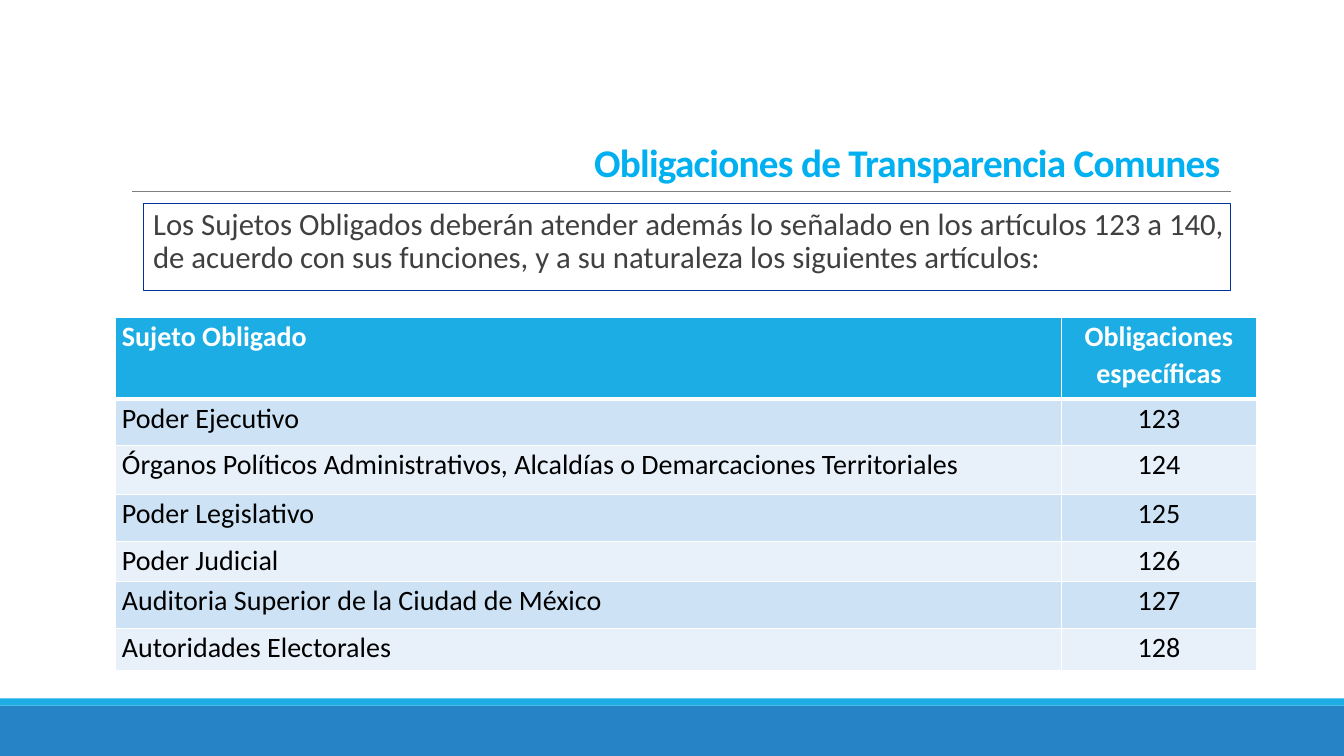
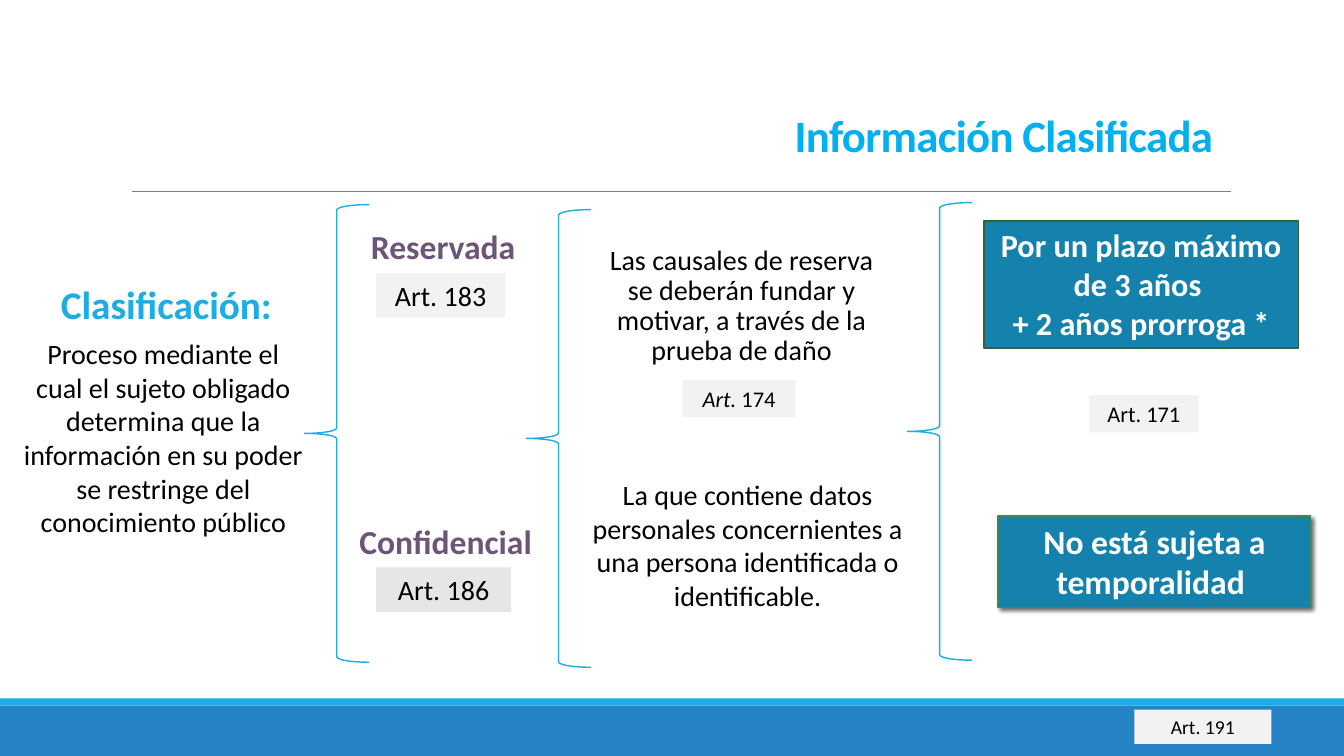
"""Build two slides on transparency duties and classified information."""
from lxml.etree import SubElement
from pptx import Presentation
from pptx.dml.color import RGBColor
from pptx.enum.shapes import MSO_CONNECTOR as Connector, MSO_SHAPE as Shape
from pptx.enum.text import MSO_ANCHOR as Anchor, PP_ALIGN as Align
from pptx.oxml.ns import qn
from pptx.util import Inches, Pt

WIDTH, HEIGHT = 13.33, 7.5
FONT = "Calibri"
CYAN, BLUE, TEAL, PURPLE = "1CADE4", "2683C6", "1482AC", "6C5578"
TITLE_COLOR, RULE_COLOR = "00B0F0", "808080"
WHITE, BLACK, DARK, PALE, GRAY = "FFFFFF", "000000", "404040", "F2F2F2", "E6E6E6"
ROW_FILLS = ("CDE3F5", "E8F1FA")
INSETS = (0.1, 0.05, 0.1, 0.05)

DUTIES_TITLE = "Obligaciones de Transparencia Comunes"
DUTIES_INTRO = (
    "Los Sujetos Obligados deberán atender además lo señalado en los artículos "
    "123 a 140, de acuerdo con sus funciones, y a su naturaleza los siguientes artículos:"
)
DUTIES = [
    ("Sujeto Obligado", "Obligaciones específicas"),
    ("Poder Ejecutivo", "123"),
    ("Órganos Políticos Administrativos, Alcaldías o Demarcaciones Territoriales", "124"),
    ("Poder Legislativo", "125"),
    ("Poder Judicial", "126"),
    ("Auditoria Superior de la Ciudad de México", "127"),
    ("Autoridades Electorales", "128"),
]
COLUMN_WIDTHS = (9.39, 1.93)
ROW_HEIGHTS = (0.81, 0.46, 0.49, 0.46, 0.4, 0.47, 0.41)

CLASSIFIED_TITLE = "Información Clasificada"
HEADINGS = [
    ("Clasificación:", (0.48, 2.73, 2.34, 0.57), 28, CYAN),
    ("Reservada", (3.45, 2.19, 1.89, 0.5), 24, PURPLE),
    ("Confidencial", (3.46, 5.12, 1.92, 0.5), 24, PURPLE),
]
EXPLANATIONS = [
    ("Proceso mediante el cual el sujeto obligado determina que la información "
     "en su poder se restringe del conocimiento público", (0.13, 3.29, 2.98, 2.12), 1),
    ("Las causales de reserva se deberán fundar y motivar, a través de la prueba de daño",
     (5.83, 2.39, 3.05, 1.31), 0.9),
    ("La que contiene datos personales concernientes a una persona identificada "
     "o identificable.", (5.71, 4.69, 3.41, 1.45), 1),
]
ARTICLES = [
    ("183", (3.73, 2.71, 1.28, 0.44), 20, PALE, False),
    ("186", (3.73, 5.63, 1.34, 0.44), 20, GRAY, False),
    ("174", (6.77, 3.77, 1.12, 0.37), 16, PALE, True),
    ("171", (10.8, 3.92, 1.09, 0.37), 16, PALE, False),
    ("191", (11.25, 7.04, 1.36, 0.34), 14, PALE, False),
]
TERM = ("Por un plazo máximo de 3 años ", "+ 2 años prorroga *")
NO_TERM = ("No está sujeta a temporalidad ",)
BRACES = [(3.02, 2.03), (5.22, 2.08), (9, 2.01)]
BRACE_SIZE = (0.64, 4.54)


def rgb(value):
    """Turn a hex string into a colour."""
    return RGBColor.from_string(value)


def write(frame, paragraphs, size, color, bold=False, align=Align.CENTER,
          spacing=1, anchor=Anchor.TOP, insets=INSETS):
    """Fill a text frame with paragraphs in one style."""
    frame.word_wrap = True
    frame.vertical_anchor = anchor
    (frame.margin_left, frame.margin_top,
     frame.margin_right, frame.margin_bottom) = map(Inches, insets)
    frame.text = "\n".join(paragraphs)
    for para in frame.paragraphs:
        para.alignment = align
        para.line_spacing = spacing
        for span in para.runs:
            span.font.name, span.font.size = FONT, Pt(size)
            span.font.bold, span.font.color.rgb = bold, rgb(color)


def add_text(page, text, place, size, color, **style):
    """Add a wrapped text box."""
    box = page.shapes.add_textbox(*map(Inches, place))
    write(box.text_frame, [text], size, color, **style)
    return box


def add_block(page, place, fill=None, line=None, line_width=1, kind=Shape.RECTANGLE):
    """Add a preset shape without a shadow."""
    block = page.shapes.add_shape(kind, *map(Inches, place))
    block.shadow.inherit = False
    if fill:
        block.fill.solid()
        block.fill.fore_color.rgb = rgb(fill)
    else:
        block.fill.background()
    if line:
        block.line.color.rgb = rgb(line)
        block.line.width = Pt(line_width)
    else:
        block.line.fill.background()
    return block


def add_shadow(block):
    """Cast a soft shadow to the lower right."""
    effects = block._element.spPr.find(qn("a:effectLst"))
    shadow = SubElement(effects, qn("a:outerShdw"), blurRad=str(Pt(3)),
                        dist=str(Pt(2)), dir="2700000", algn="tl", rotWithShape="0")
    color = SubElement(shadow, qn("a:srgbClr"), val=BLACK)
    SubElement(color, qn("a:alpha"), val="60000")


def add_page(deck, title, place, size):
    """Add a slide with the shared bands, rule and title."""
    page = deck.slides.add_slide(deck.slide_layouts[6])
    add_block(page, (0, 7, WIDTH, 0.5), BLUE)
    add_block(page, (0, 6.93, WIDTH, 0.07), CYAN)
    rule = page.shapes.add_connector(
        Connector.STRAIGHT, *map(Inches, (1.31, 1.9, 12.21, 1.9)))
    rule.line.color.rgb, rule.line.width = rgb(RULE_COLOR), Pt(0.5)
    SubElement(rule._element.spPr, qn("a:effectLst"))
    box = add_text(page, title, place, size, TITLE_COLOR, bold=True,
                   align=Align.RIGHT, spacing=0.85, anchor=Anchor.BOTTOM)
    box.text_frame.paragraphs[0].runs[0]._r.get_or_add_rPr().set("spc", "-50")
    return page


def set_borders(cell, bottom):
    """Draw white cell borders, with the given bottom width."""
    for side, width in zip("LRTB", (1, 1, 1, bottom)):
        edge = SubElement(cell._tc.get_or_add_tcPr(), qn(f"a:ln{side}"), w=str(Pt(width)))
        SubElement(SubElement(edge, qn("a:solidFill")), qn("a:srgbClr"), val=WHITE)


def add_duties_table(page):
    """Add the table of specific duties."""
    place = (1.14, 3.15, sum(COLUMN_WIDTHS), sum(ROW_HEIGHTS))
    table = page.shapes.add_table(
        len(DUTIES), len(COLUMN_WIDTHS), *map(Inches, place)).table
    for column, width in zip(table.columns, COLUMN_WIDTHS):
        column.width = Inches(width)
    for index, (row, height, texts) in enumerate(zip(table.rows, ROW_HEIGHTS, DUTIES)):
        row.height = Inches(height)
        header = index == 0
        for cell, text, align in zip(row.cells, texts, (Align.LEFT, Align.CENTER)):
            write(cell.text_frame, [text], 20, WHITE if header else BLACK,
                  bold=header, align=align, spacing=1.07)
            cell.margin_left = cell.margin_right = Inches(0.07)
            cell.margin_top = cell.margin_bottom = 0
            set_borders(cell, 3 if header else 1)
            cell.fill.solid()
            cell.fill.fore_color.rgb = rgb(CYAN if header else ROW_FILLS[(index - 1) % 2])


def build_duties(deck):
    """Build the slide on common duties."""
    page = add_page(deck, DUTIES_TITLE, (3.95, 1.01, 8.25, 0.88), 28)
    intro = add_block(page, (1.42, 2.02, 10.78, 0.86), line="003399", line_width=0.75)
    write(intro.text_frame, [DUTIES_INTRO], 22, DARK, align=Align.LEFT,
          spacing=0.9, insets=(0.1, 0.05, 0, 0.05))
    add_duties_table(page)


def build_classified(deck):
    """Build the slide on classified information."""
    page = add_page(deck, CLASSIFIED_TITLE, (5.52, 1.04, 6.61, 0.61), 32)
    for text, place, size, color in HEADINGS:
        add_text(page, text, place, size, color, bold=True)
    for text, place, spacing in EXPLANATIONS:
        add_text(page, text, place, 20, BLACK, spacing=spacing)
    term = add_block(page, (9.76, 2.19, 3.12, 1.26), TEAL, "2E653D", 1.25)
    write(term.text_frame, TERM, 23, WHITE, bold=True)
    no_term = add_block(page, (9.9, 5.12, 3.1, 0.91), TEAL, "3E8853")
    write(no_term.text_frame, NO_TERM, 24, WHITE, bold=True)
    add_shadow(no_term)
    for number, place, size, fill, italic in ARTICLES:
        frame = add_block(page, place, fill).text_frame
        write(frame, ["Art. " if italic else f"Art. {number}"], size, BLACK)
        if italic:
            para = frame.paragraphs[0]
            para.runs[0].font.italic = True
            span = para.add_run()
            span.text = number
            span.font.name, span.font.size = FONT, Pt(size)
            span.font.color.rgb = rgb(BLACK)
    for corner in BRACES:
        add_block(page, corner + BRACE_SIZE, line=CYAN, kind=Shape.LEFT_BRACE)


def main():
    """Build and save the deck."""
    deck = Presentation()
    deck.slide_width, deck.slide_height = Inches(WIDTH), Inches(HEIGHT)
    build_duties(deck)
    build_classified(deck)
    deck.save("out.pptx")


if __name__ == "__main__":
    main()
